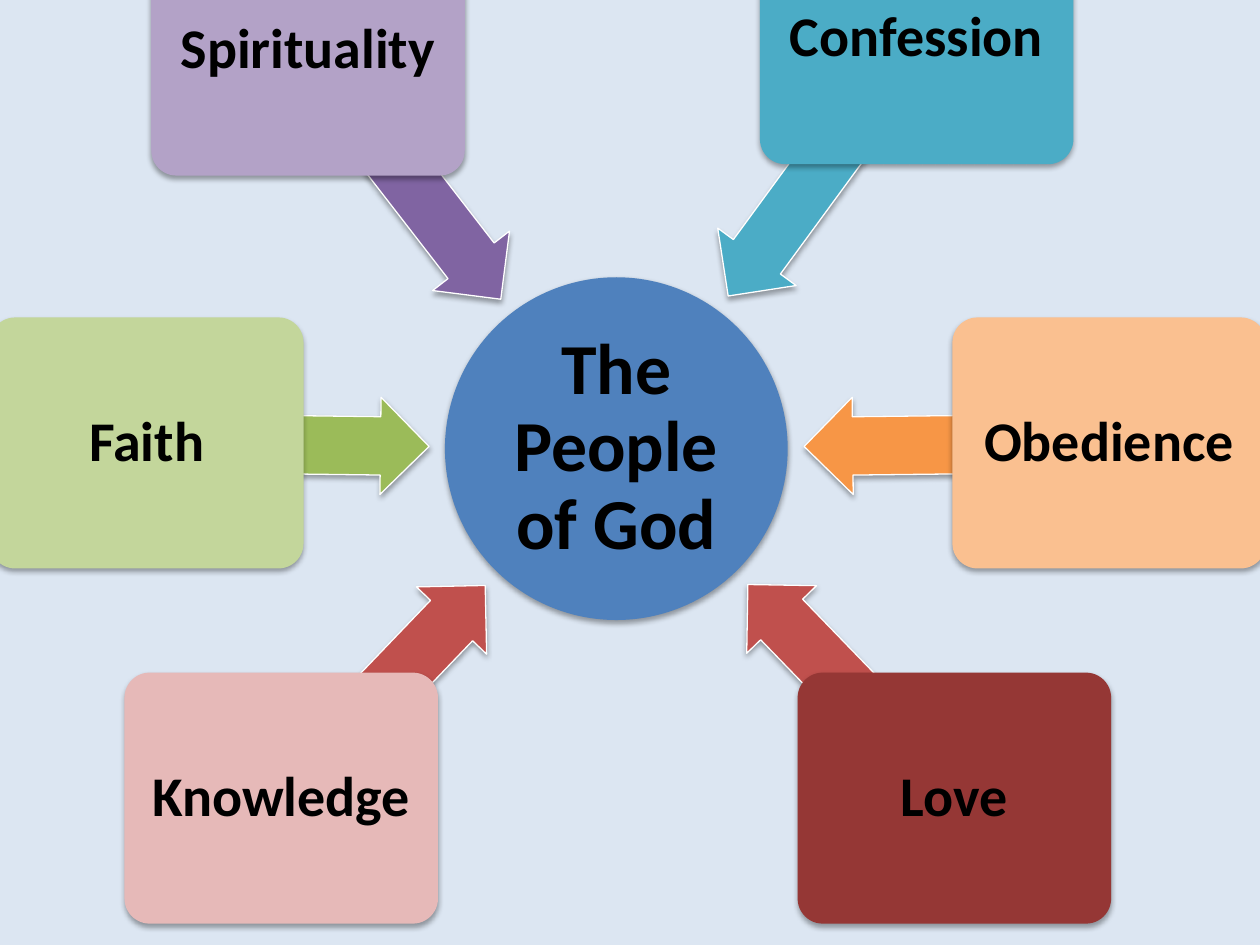
import math

from lxml import etree
from pptx import Presentation
from pptx.dml.color import RGBColor
from pptx.enum.shapes import MSO_SHAPE
from pptx.enum.text import MSO_ANCHOR, PP_ALIGN
from pptx.oxml.ns import qn
from pptx.util import Cm, Pt

ELLIPSE = MSO_SHAPE.OVAL
ROUNDED = MSO_SHAPE.ROUNDED_RECTANGLE
ARROW = MSO_SHAPE.LEFT_ARROW
MIDDLE = MSO_ANCHOR.MIDDLE
CENTER = PP_ALIGN.CENTER

COLORS = {
    "background": "DCE6F2",
    "text": "000000",
    "shadow": "000000",
    "outline": "FFFFFF",
    "hub": "4F81BD",
    "red": "C0504D",
    "pink": "E6B9B8",
    "dark red": "953735",
    "green": "9BBB59",
    "light green": "C3D69B",
    "purple": "8064A2",
    "lilac": "B3A2C7",
    "teal": "4BACC6",
    "orange": "F79646",
    "light orange": "FAC090",
}

HUB_LEFT, HUB_TOP, HUB_SIZE = 8.97, 5.59, 6.91
BOX_WIDTH, BOX_HEIGHT = 6.32, 5.06
ARROW_HEIGHT = 1.96

VIRTUES = [
    ("Knowledge", 2.51, 13.56, "pink", "red", 5.94),
    ("Faith", -0.2, 6.4, "light green", "green", 5.69),
    ("Spirituality", 3.05, -1.52, "lilac", "purple", 6.35),
    ("Confession", 15.32, -1.75, "teal", "teal", 6.43),
    ("Obedience", 19.2, 6.4, "light orange", "orange", 6.15),
    ("Love", 16.08, 13.56, "dark red", "red", 5.99),
]


def rgb(name):
    return RGBColor.from_string(COLORS[name])


def add_shadow(shape):
    shape.shadow.inherit = False
    effects = shape._element.spPr.find(qn("a:effectLst"))
    shadow = etree.SubElement(
        effects, qn("a:outerShdw"), blurRad=str(Pt(3.1)), dist=str(Pt(1.8)),
        dir="5400000", rotWithShape="0")
    color = etree.SubElement(shadow, qn("a:srgbClr"), val=COLORS["shadow"])
    etree.SubElement(color, qn("a:alpha"), val="35000")


def add_filled_shape(slide, kind, left, top, width, height, fill):
    shape = slide.shapes.add_shape(kind, Cm(left), Cm(top), Cm(width), Cm(height))
    shape.fill.solid()
    shape.fill.fore_color.rgb = rgb(fill)
    shape.line.fill.background()
    add_shadow(shape)
    return shape


def write_label(shape, text, size, inset):
    frame = shape.text_frame
    frame.word_wrap = True
    frame.vertical_anchor = MIDDLE
    frame.margin_left = frame.margin_right = Cm(inset)
    frame.margin_top = frame.margin_bottom = Cm(inset)
    paragraph = frame.paragraphs[0]
    paragraph.alignment = CENTER
    paragraph.line_spacing = 0.9
    run = paragraph.add_run()
    run.text = text
    run.font.name = "Calibri"
    run.font.size = Pt(size)
    run.font.bold = True
    run.font.color.rgb = rgb("text")


def add_hub(slide, text):
    hub = add_filled_shape(slide, ELLIPSE, HUB_LEFT, HUB_TOP, HUB_SIZE, HUB_SIZE, "hub")
    write_label(hub, text, 41, 0.08)


def add_arrow_to_hub(slide, start_x, start_y, length, fill):
    hub_x, hub_y = HUB_LEFT + HUB_SIZE / 2, HUB_TOP + HUB_SIZE / 2
    angle = math.atan2(hub_y - start_y, hub_x - start_x)
    center_x = start_x + length / 2 * math.cos(angle)
    center_y = start_y + length / 2 * math.sin(angle)
    arrow = add_filled_shape(
        slide, ARROW, center_x - length / 2, center_y - ARROW_HEIGHT / 2,
        length, ARROW_HEIGHT, fill)
    arrow.adjustments[0] = 0.6
    arrow.adjustments[1] = 0.5
    arrow.rotation = math.degrees(angle) + 180
    arrow.line.color.rgb = rgb("outline")
    arrow.line.width = Pt(0.75)


def add_box(slide, text, left, top, fill):
    box = add_filled_shape(slide, ROUNDED, left, top, BOX_WIDTH, BOX_HEIGHT, fill)
    box.adjustments[0] = 0.1
    write_label(box, text, 32, 0.17)


def main():
    presentation = Presentation()
    presentation.slide_width = Cm(25.4)
    presentation.slide_height = Cm(19.05)
    slide = presentation.slides.add_slide(presentation.slide_layouts[6])
    slide.background.fill.solid()
    slide.background.fill.fore_color.rgb = rgb("background")

    add_hub(slide, "The People of God")
    for text, left, top, box_fill, arrow_fill, length in VIRTUES:
        add_arrow_to_hub(
            slide, left + BOX_WIDTH / 2, top + BOX_HEIGHT / 2, length, arrow_fill)
        add_box(slide, text, left, top, box_fill)

    presentation.save("out.pptx")


if __name__ == "__main__":
    main()
